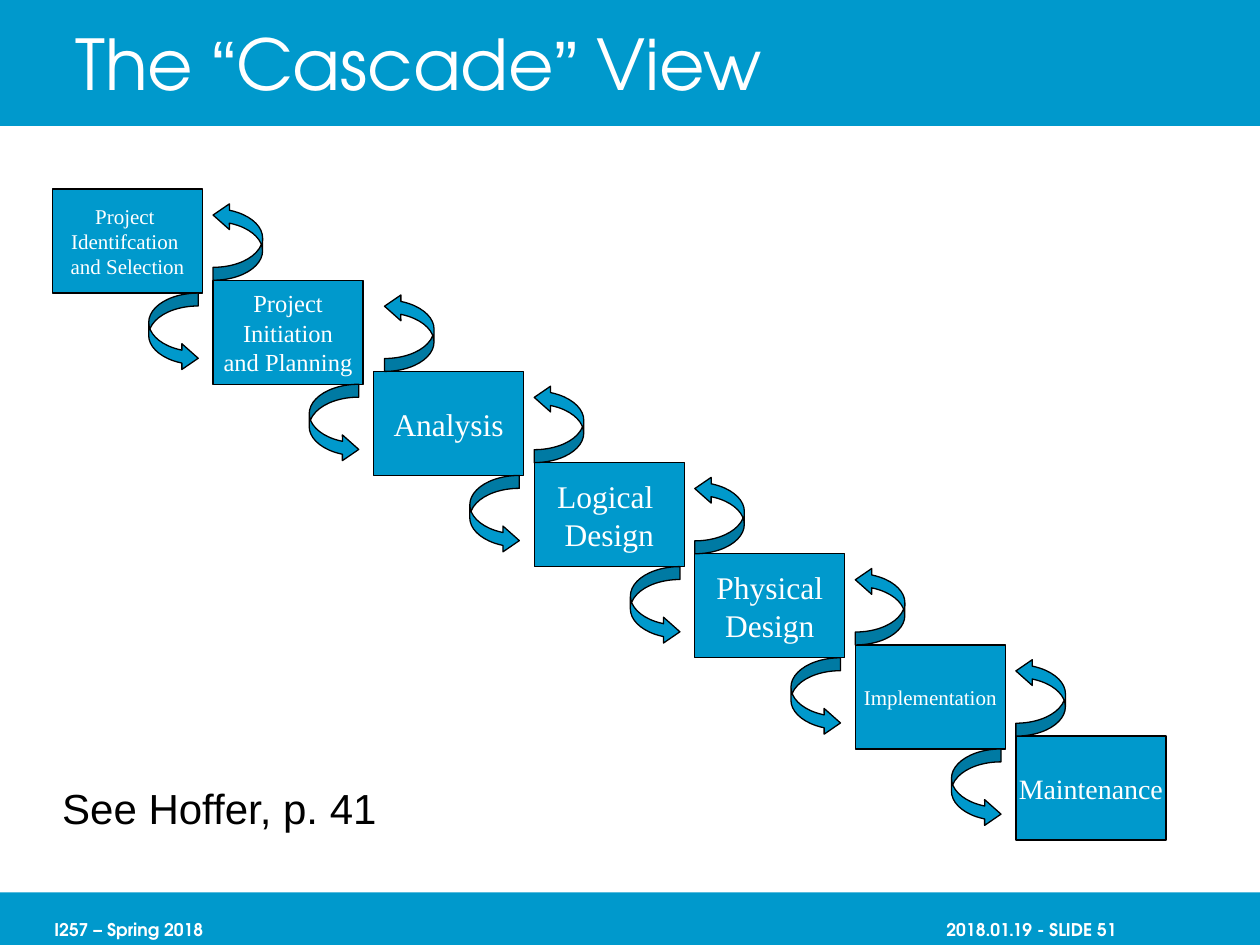
from dataclasses import dataclass

from pptx import Presentation
from pptx.dml.color import RGBColor
from pptx.enum.shapes import MSO_SHAPE as Shape
from pptx.enum.text import MSO_ANCHOR as Anchor, MSO_AUTO_SIZE as AutoSize, PP_ALIGN as Align
from pptx.util import Pt


@dataclass(frozen=True)
class Theme:
    blue: RGBColor = RGBColor(0x00, 0x99, 0xCC)
    white: RGBColor = RGBColor(0xFF, 0xFF, 0xFF)
    black: RGBColor = RGBColor(0x00, 0x00, 0x00)
    heading_font: str = "TeX Gyre Adventor"
    box_font: str = "Times New Roman"
    plain_font: str = "Arial"
    title_size: int = 40
    note_size: int = 24
    footer_size: int = 10
    small: int = 12
    medium: int = 14
    large: int = 16
    largest: int = 18


theme = Theme()


def add_block(kind, left, top, width, height, outlined=True):
    block = slide.shapes.add_shape(kind, Pt(left), Pt(top), Pt(width), Pt(height))
    block.shadow.inherit = False
    block.fill.solid()
    block.fill.fore_color.rgb = theme.blue
    if outlined:
        block.line.color.rgb = theme.black
        block.line.width = Pt(0.75)
    else:
        block.line.fill.background()
    return block


def write(frame, text, font, size, color, align, bold=False):
    frame.text = text
    for paragraph in frame.paragraphs:
        paragraph.alignment = align
        for run in paragraph.runs:
            run.font.name = font
            run.font.size = Pt(size)
            run.font.bold = bold
            run.font.color.rgb = color


deck = Presentation()
deck.slide_width, deck.slide_height = Pt(720), Pt(540)
slide = deck.slides.add_slide(deck.slide_layouts[5])

for band_top, band_height in ((0, 72), (510, 30)):
    add_block(Shape.RECTANGLE, 0, band_top, 720, band_height, outlined=False)

title = slide.shapes.title
slide.shapes._spTree.append(title._element)
title.left, title.top, title.width, title.height = Pt(36), Pt(0), Pt(612), Pt(72)
heading = title.text_frame
heading.auto_size = AutoSize.NONE
heading.vertical_anchor = Anchor.MIDDLE
heading.paragraphs[0].alignment = Align.LEFT
for part in ("The ", "“", "Cascade", "”", " View"):
    run = heading.paragraphs[0].add_run()
    run.text = part
    run.font.name = theme.plain_font if part in "“”" else theme.heading_font
    run.font.size = Pt(theme.title_size)
    run.font.color.rgb = theme.white

for footer_text, footer_left, footer_align in (
    ("I257 – Spring 2018", 24, Align.LEFT),
    ("2018.01.19 - SLIDE 51", 488, Align.RIGHT),
):
    footer = slide.shapes.add_textbox(Pt(footer_left), Pt(522), Pt(150), Pt(18)).text_frame
    footer.word_wrap = True
    footer.vertical_anchor = Anchor.MIDDLE
    footer.margin_right = footer.margin_top = footer.margin_bottom = 0
    write(footer, footer_text, theme.heading_font, theme.footer_size, theme.white, footer_align, bold=True)

phases = (
    ("Project \nIdentifcation \nand Selection", theme.small),
    ("Project\nInitiation\nand Planning", theme.medium),
    ("Analysis", theme.largest),
    ("Logical \nDesign", theme.largest),
    ("Physical\nDesign", theme.largest),
    ("Implementation", theme.small),
    ("Maintenance", theme.large),
)
start_left, start_top = 30, 108
step_x, step_y = 91.75, 52.1
box_width, box_height = 85.75, 59.5
arrow_width, arrow_height = 28.3, 44.6
arrow_bends = (0.26, 0.52, 0.33)
places = [(start_left + i * step_x, start_top + i * step_y) for i in range(len(phases))]

for (phase, size), (left, top) in zip(phases, places):
    box = add_block(Shape.RECTANGLE, left, top, box_width, box_height).text_frame
    box.word_wrap = False
    box.vertical_anchor = Anchor.MIDDLE
    write(box, phase, theme.box_font, size, theme.white, Align.CENTER)

for i, (left, top) in enumerate(places):
    arrows = [(left + 55, top + box_height, 0)]
    if i > 0:
        nudge = 6.2 if i == 2 else 0
        arrows.append((left + nudge, top - arrow_height, 180))
    if i == len(places) - 1:
        arrows.pop(0)
    for arrow_left, arrow_top, turn in arrows:
        arrow = add_block(Shape.CURVED_RIGHT_ARROW, arrow_left, arrow_top, arrow_width, arrow_height)
        arrow.rotation = turn
        for k, bend in enumerate(arrow_bends):
            arrow.adjustments[k] = bend

reference = slide.shapes.add_textbox(Pt(27.4), Pt(443.5), Pt(196), Pt(36)).text_frame
reference.word_wrap = False
reference.auto_size = AutoSize.SHAPE_TO_FIT_TEXT
write(reference, "See Hoffer, p. 41", theme.plain_font, theme.note_size, theme.black, Align.CENTER)

deck.save("out.pptx")
